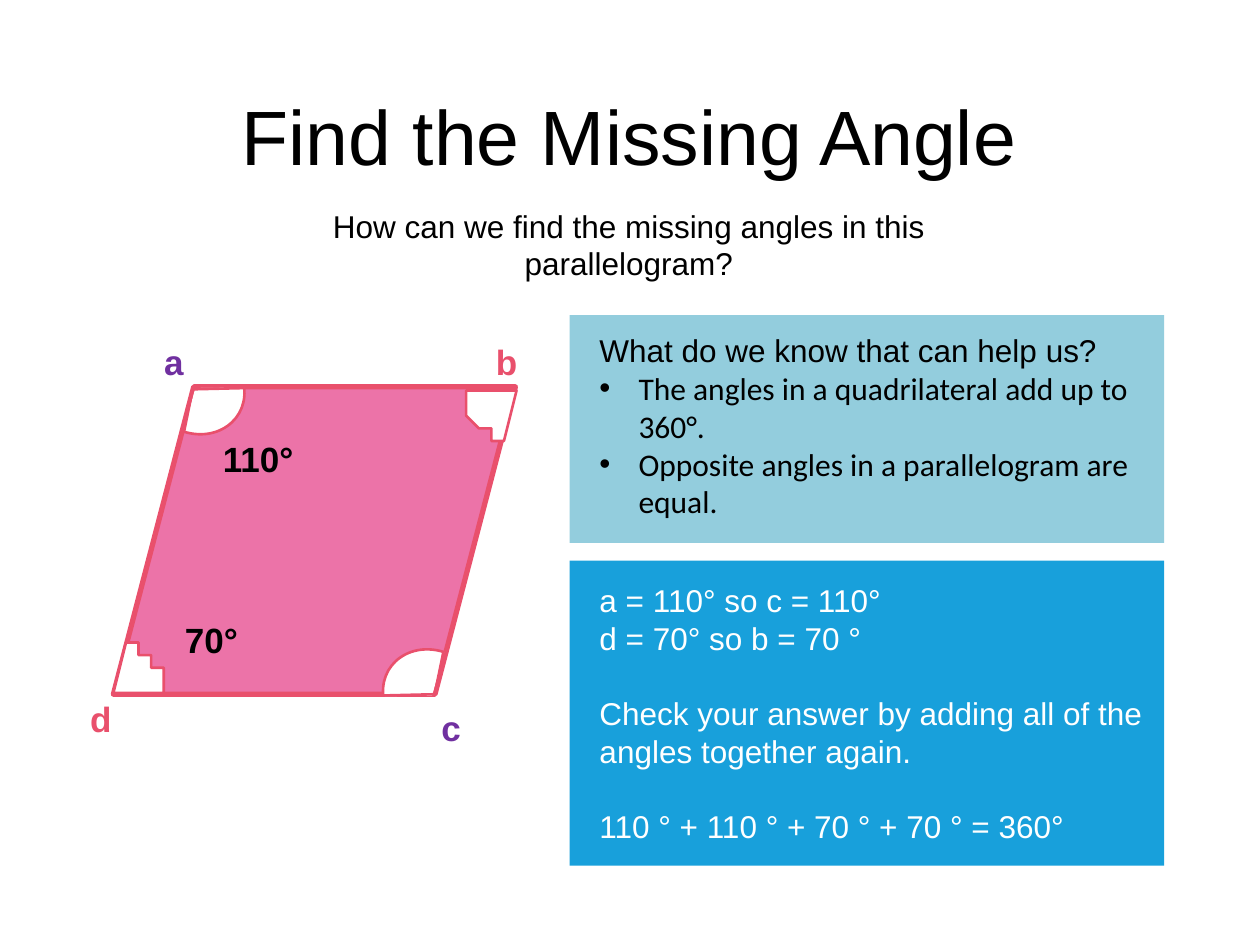
from lxml import etree
from pptx import Presentation
from pptx.dml.color import RGBColor
from pptx.enum.shapes import MSO_CONNECTOR, MSO_SHAPE
from pptx.enum.text import MSO_ANCHOR, PP_ALIGN
from pptx.oxml.ns import qn
from pptx.util import Inches, Pt

LEFT, CENTER = PP_ALIGN.LEFT, PP_ALIGN.CENTER
TOP, MIDDLE = MSO_ANCHOR.TOP, MSO_ANCHOR.MIDDLE
RECTANGLE, ARC = MSO_SHAPE.RECTANGLE, MSO_SHAPE.ARC
PARALLELOGRAM = MSO_SHAPE.FLOWCHART_DATA
STRAIGHT = MSO_CONNECTOR.STRAIGHT

COLORS = {
    "black": "000000",
    "white": "FFFFFF",
    "pink": "EC73A8",
    "red": "E9506C",
    "purple": "7030A0",
    "pale": "93CDDD",
    "blue": "18A0DB",
}
COLUMNS, ROWS = 100, 75
CELL = Inches(10) // COLUMNS
BLANK_LAYOUT = 6
BODY_SIZE = 18
CURVE_STEPS = 16


def color(name):
    return RGBColor.from_string(COLORS[name])


def cells(*values):
    return [round(value * CELL) for value in values]


def mirrored(x, y):
    """Return the point opposite to (x, y) through the parallelogram's centre."""
    return 49.8 - x, 86 - y


def bezier(start, first, second, end):
    """Return points along a cubic curve, without its start."""
    points = []
    for step in range(1, CURVE_STEPS + 1):
        t = step / CURVE_STEPS
        weights = ((1 - t) ** 3, 3 * t * (1 - t) ** 2, 3 * t * t * (1 - t), t ** 3)
        controls = (start, first, second, end)
        points.append(tuple(
            sum(weight * point[axis] for weight, point in zip(weights, controls))
            for axis in (0, 1)
        ))
    return points


class SlideBuilder:
    """Draws on one slide; lengths are cells of a 100 by 75 grid."""

    def __init__(self, slide, font="Arial"):
        self.shapes = slide.shapes
        self.font = font

    def paint(self, shape, fill, line=None, width=1.5):
        shape.shadow.inherit = False
        shape.fill.solid()
        shape.fill.fore_color.rgb = color(fill)
        if line:
            shape.line.color.rgb = color(line)
            shape.line.width = Pt(width)
        else:
            shape.line.fill.background()
        return shape

    def shape(self, kind, area, fill, line=None, width=1.5):
        return self.paint(self.shapes.add_shape(kind, *cells(*area)), fill, line, width)

    def polygon(self, points, fill, line):
        outline = self.shapes.build_freeform(*points[0], scale=CELL)
        outline.add_line_segments(points[1:], close=True)
        return self.paint(outline.convert_to_shape(), fill, line)

    def line(self, start, end, stroke):
        connector = self.shapes.add_connector(STRAIGHT, *cells(*start, *end))
        connector.line.color.rgb = color(stroke)
        connector.line.width = Pt(1.5)
        etree.SubElement(connector._element.spPr, qn("a:effectLst"))

    def text(self, area, lines, size=BODY_SIZE, ink="black", bold=False,
             align=LEFT, anchor=TOP):
        box = self.shapes.add_textbox(*cells(*area))
        frame = box.text_frame
        frame.word_wrap = True
        frame.vertical_anchor = anchor
        for index, line in enumerate(lines):
            paragraph = frame.paragraphs[0] if index == 0 else frame.add_paragraph()
            paragraph.text = line
            paragraph.alignment = align
            paragraph.font.name = self.font
            paragraph.font.size = Pt(size)
            paragraph.font.bold = bold
            paragraph.font.color.rgb = color(ink)
        return frame.paragraphs

    def bullet(self, paragraph, font):
        paragraph.font.name = font
        properties = paragraph._p.get_or_add_pPr()
        indent = Inches(0.31)
        properties.set("marL", str(indent))
        properties.set("indent", str(-indent))
        mark = etree.Element(qn("a:buChar"), char="•")
        typeface = etree.Element(qn("a:buFont"), typeface="Arial")
        properties.insert(0, mark)
        properties.insert(0, typeface)


def draw_parallelogram(page):
    page.shape(PARALLELOGRAM, (9, 30.7, 31.9, 24.4), "pink", "red", 3)

    curve = bezier((39.2, 34.6), (37.9, 34.2), (37, 33.1), (37, 31.8))
    wedge = [(37.2, 30.8), (40.7, 30.8), (40.8, 31), (39.8, 34.6), (39.2, 34.6),
             *curve, (37, 31.5)]
    page.polygon(wedge, "white", "red")
    page.polygon([mirrored(*point) for point in wedge], "white", "red")

    width, height = 7.1, 8
    corner, ends = (15.3, 30.9), ((14.6, 34.3), (19.4, 30.8))
    center = (15.5, 30.8)
    for place, turn in ((lambda *point: point, 119.6), (mirrored, 299.6)):
        x, y = place(*center)
        arc = page.shape(ARC, (x - width / 2, y - height / 2, width, height),
                         "white", "red")
        arc.adjustments[0], arc.adjustments[1] = 143.75, 207.56
        arc.rotation = turn
        for end in ends:
            page.line(place(*corner), place(*end), "red")

    for letter, x, y, ink in (("a", 11, 26.5, "purple"), ("b", 37.4, 26.5, "red"),
                              ("c", 33, 55.6, "purple"), ("d", 5.2, 54.9, "red")):
        page.text((x, y, 5.6, 4.4), [letter], 20, ink, True, CENTER)
    for angle, x, y in (("110°", 16.7, 34.2), ("70°", 13.7, 48.6)):
        page.text((x, y, 9.7, 4.4), [angle], 20, bold=True)


def draw_panels(page):
    page.shape(RECTANGLE, (45.2, 25, 47.2, 18.1), "pale")
    facts = page.text((46.6, 25.8, 44.4, 16.1), [
        "What do we know that can help us?",
        "The angles in a quadrilateral add up to 360°.",
        "Opposite angles in a parallelogram are equal.",
    ])
    for fact in facts[1:]:
        page.bullet(fact, "Calibri")

    page.shape(RECTANGLE, (45.2, 44.5, 47.2, 24.2), "blue")
    steps = page.text((46.6, 45.6, 50, 22.2), [
        "a = 110° so c = 110°",
        "d = 70° so b = 70 °",
        "Check your answer by adding all of the angles together again.",
        "110 ° + 110 ° + 70 ° + 70 ° = 360°",
    ], ink="white")
    for step in steps[2:]:
        step.space_before = Pt(21.5)


def main():
    deck = Presentation()
    deck.slide_width, deck.slide_height = CELL * COLUMNS, CELL * ROWS
    page = SlideBuilder(deck.slides.add_slide(deck.slide_layouts[BLANK_LAYOUT]))
    page.text((5, 5.2, 89.9, 10.9), ["Find the Missing Angle"], 44,
              align=CENTER, anchor=MIDDLE)
    page.text((24.9, 15.9, 50, 7.1),
              ["How can we find the missing angles in this parallelogram?"],
              align=CENTER)
    draw_parallelogram(page)
    draw_panels(page)
    deck.save("out.pptx")


if __name__ == "__main__":
    main()
